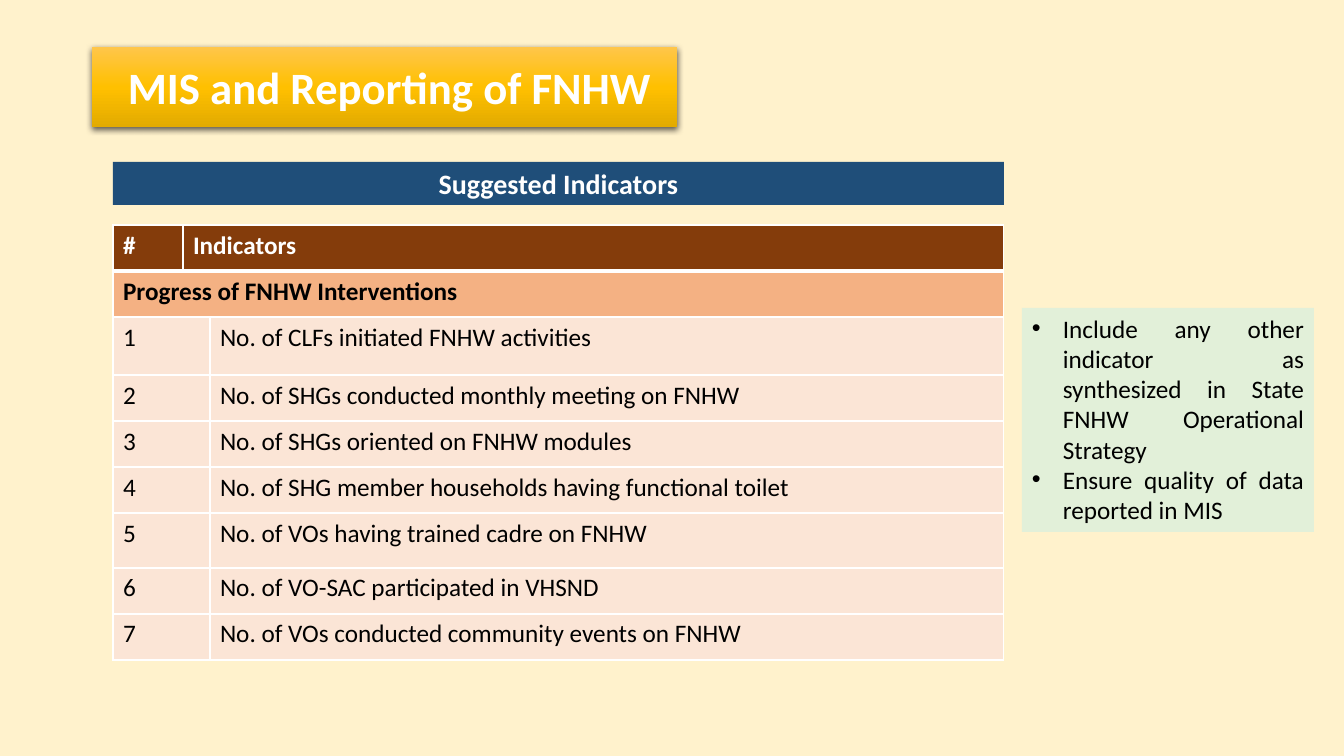
"""Build the slide on MIS and reporting indicators for FNHW."""
from copy import deepcopy

from lxml import etree
from pptx import Presentation
from pptx import util as u
from pptx.dml.color import RGBColor
from pptx.enum import shapes, text
from pptx.oxml.ns import qn

TITLE = " MIS and Reporting of FNHW"
BANNER = "Suggested Indicators"
HEADINGS = ("#", "Indicators")
SECTION = "Progress of FNHW Interventions"
INDICATORS = [
    "No. of CLFs initiated FNHW activities",
    "No. of SHGs conducted monthly meeting on FNHW",
    "No. of SHGs oriented on FNHW modules",
    "No. of SHG member households having functional toilet",
    "No. of VOs having trained cadre on FNHW",
    "No. of VO-SAC participated in VHSND",
    "No. of VOs conducted community events on FNHW",
]
NOTES = [
    "Include any other indicator as synthesized in State FNHW Operational Strategy",
    "Ensure quality of data reported in MIS",
]

COLORS = {
    "page": "FFF2CC", "banner": "1F4E79", "header": "843C0B", "section": "F4B183",
    "row": "FBE5D6", "notes": "E2F0D9", "white": "FFFFFF", "black": "000000",
}
TITLE_STOPS = [(0, "FFC64B"), (0.5, "FFC000"), (1, "E3AB00")]
FONT = "Calibri"
SLIDE = (1344, 756)
TITLE_BOX = (92, 47, 585, 80)
BANNER_BOX = (113, 162, 891, 43)
NOTES_BOX = (1022, 308, 292, 224)
TABLE_LEFT, TABLE_TOP = 113, 225
COLUMNS = [70, 27, 794]
ROW, TALL_ROWS = 46, {2: 58, 6: 55}
ROWS = [TALL_ROWS.get(i, ROW) for i in range(len(INDICATORS) + 2)]
BULLET_INDENT = 31


def px(length):
    return u.Emu(round(length * 914400 / 100.8))


def rgb(name):
    return RGBColor.from_string(COLORS[name])


def write(paragraph, words, size, color, bold=False):
    run = paragraph.add_run()
    run.text = words
    run.font.name, run.font.size, run.font.bold = FONT, u.Pt(size), bold
    run.font.color.rgb = rgb(color)


def add_box(slide, box, fill=None, anchor=text.MSO_ANCHOR.TOP):
    panel = slide.shapes.add_shape(shapes.MSO_SHAPE.RECTANGLE, *map(px, box))
    panel.shadow.inherit = False
    panel.line.fill.background()
    if fill:
        panel.fill.solid()
        panel.fill.fore_color.rgb = rgb(fill)
    panel.text_frame.word_wrap = True
    panel.text_frame.vertical_anchor = anchor
    return panel


def add_title(slide):
    title = add_box(slide, TITLE_BOX, anchor=text.MSO_ANCHOR.MIDDLE)
    title.fill.gradient()
    title.fill.gradient_angle = 270
    stop_list = title._element.spPr.find(qn("a:gradFill")).find(qn("a:gsLst"))
    stop_list.append(deepcopy(stop_list[-1]))
    for stop, (position, color) in zip(title.fill.gradient_stops, TITLE_STOPS):
        stop.position = position
        stop.color.rgb = RGBColor.from_string(color)
    effects = title._element.spPr.find(qn("a:effectLst"))
    shadow = etree.SubElement(effects, qn("a:outerShdw"), blurRad=str(u.Pt(4.5)),
                              dist=str(u.Pt(1.5)), dir="5400000", algn="ctr", rotWithShape="0")
    tint = etree.SubElement(shadow, qn("a:srgbClr"), val=COLORS["black"])
    etree.SubElement(tint, qn("a:alpha"), val="63000")
    heading = title.text_frame.paragraphs[0]
    heading.alignment = text.PP_ALIGN.CENTER
    write(heading, TITLE, 32, "white", True)


def add_banner(slide):
    heading = add_box(slide, BANNER_BOX, "banner").text_frame.paragraphs[0]
    heading.alignment = text.PP_ALIGN.CENTER
    write(heading, BANNER, 20, "white", True)


def add_notes(slide):
    frame = add_box(slide, NOTES_BOX, "notes").text_frame
    frame.auto_size = text.MSO_AUTO_SIZE.SHAPE_TO_FIT_TEXT
    for i, note in enumerate(NOTES):
        item = frame.add_paragraph() if i else frame.paragraphs[0]
        item.alignment = text.PP_ALIGN.JUSTIFY
        properties = item._p.get_or_add_pPr()
        properties.set("marL", str(px(BULLET_INDENT)))
        properties.set("indent", str(-px(BULLET_INDENT)))
        etree.SubElement(properties, qn("a:buFont"), typeface="Arial")
        etree.SubElement(properties, qn("a:buChar"), char="•")
        write(item, note, 18, "black")


def style_cell(cell, fill, borders):
    cell.fill.solid()
    cell.fill.fore_color.rgb = rgb(fill)
    for i, (side, width) in enumerate(borders.items()):
        edge = etree.Element(qn(f"a:ln{side}"), w=str(u.Pt(width)))
        paint = etree.SubElement(edge, qn("a:solidFill"))
        etree.SubElement(paint, qn("a:srgbClr"), val=COLORS["white"])
        cell._tc.get_or_add_tcPr().insert(i, edge)


def add_indicators(slide):
    table = slide.shapes.add_table(len(ROWS), len(COLUMNS), px(TABLE_LEFT), px(TABLE_TOP),
                                   px(sum(COLUMNS)), px(sum(ROWS))).table
    for column, width in zip(table.columns, COLUMNS):
        column.width = px(width)
    for i, (row, height) in enumerate(zip(table.rows, ROWS)):
        row.height = px(height)
        fill = ("header", "section")[i] if i < 2 else "row"
        borders = {"L": 1, "R": 1, "T": 3 if i == 1 else 1, "B": 3 if i == 0 else 1}
        for cell in row.cells:
            style_cell(cell, fill, borders)

    def fill_in(row, column, words, color="black", bold=False, last=None):
        cell = table.cell(row, column)
        if last is not None:
            cell.merge(table.cell(row, last))
        write(cell.text_frame.paragraphs[0], words, 18, color, bold)

    fill_in(0, 0, HEADINGS[0], "white", True)
    fill_in(0, 1, HEADINGS[1], "white", True, last=2)
    fill_in(1, 0, SECTION, bold=True, last=2)
    for number, indicator in enumerate(INDICATORS, 1):
        fill_in(number + 1, 0, str(number), last=1)
        fill_in(number + 1, 2, indicator)


def main():
    deck = Presentation()
    deck.slide_width, deck.slide_height = map(px, SLIDE)
    slide = deck.slides.add_slide(deck.slide_layouts[6])
    slide.background.fill.solid()
    slide.background.fill.fore_color.rgb = rgb("page")
    add_banner(slide)
    add_indicators(slide)
    add_notes(slide)
    add_title(slide)
    deck.save("out.pptx")


if __name__ == "__main__":
    main()
